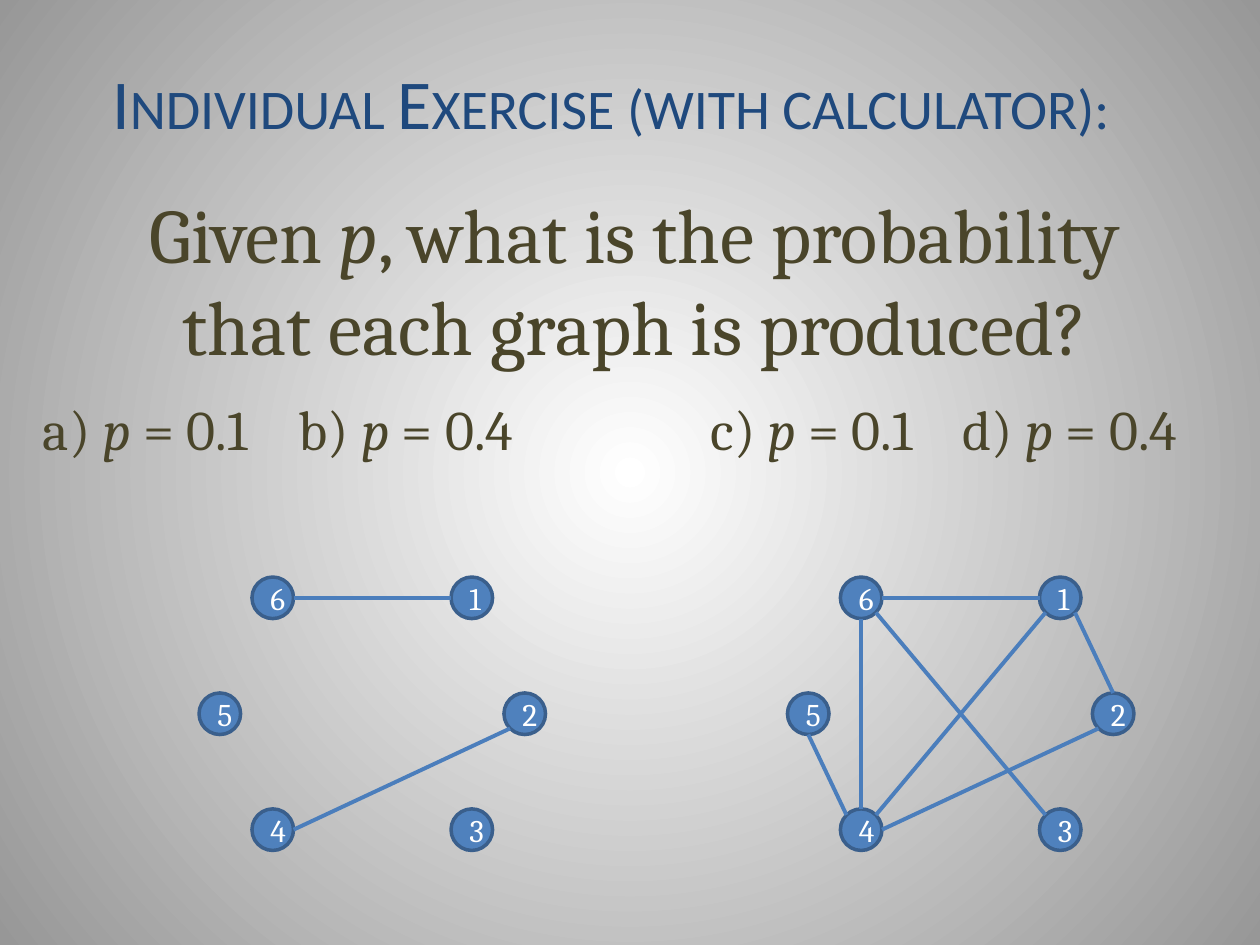
from math import cos, radians, sin

from lxml.etree import SubElement
from pptx import Presentation
from pptx.dml.color import RGBColor
from pptx.enum.shapes import MSO_CONNECTOR, MSO_SHAPE
from pptx.enum.text import MSO_ANCHOR, MSO_AUTO_SIZE, PP_ALIGN
from pptx.oxml.ns import qn
from pptx.util import Inches, Pt

TITLE = "Individual Exercise (with calculator):"
QUESTION = ["Given ", "p", ", what is the probability that each graph is produced?"]
NODES = {"5": (0, 1), "4": (0.42, 2), "6": (0.42, 0),
         "3": (2, 2), "2": (2.42, 1), "1": (2, 0)}
SITES = {"right": 0, "bottom right": 45, "bottom": 90, "bottom left": 135,
         "top left": 225, "top": 270, "top right": 315, "left": 180}
SHARED_EDGES = [("4", "right", "2", "bottom left"), ("6", "right", "1", "left")]
GRAPHS = [
    {"left": 1.58, "box": (0, 3.08, 4.42, 0.64), "inset": 0.34, "tab": 2.03,
     "cases": ["a) ", "p", " = 0.1\tb) ", "p", " = 0.4"],
     "edges": SHARED_EDGES},
    {"left": 6.25, "box": (5.33, 3.08, 4.33, 0.64), "inset": 0.31, "tab": 2,
     "cases": ["c) ", "p", " = 0.1\td) ", "p", " = 0.4"],
     "edges": SHARED_EDGES + [
         ("2", "top", "1", "bottom right"),
         ("4", "top", "6", "bottom"),
         ("4", "top right", "1", "bottom left"),
         ("4", "top left", "5", "bottom"),
         ("3", "top left", "6", "bottom right")]},
]
TOP, ROW_STEP, DIAMETER = 4.58, 0.92, 0.33
OLIVE = "4A452A"


def paint(color_format, value):
    color_format.rgb = RGBColor.from_string(value)


def style(paragraph, size, font, color, align):
    paragraph.font.size = Pt(size)
    paragraph.font.name = font
    paint(paragraph.font.color, color)
    paragraph.alignment = align


def place(shape, left, top, width, height):
    shape.left, shape.top = Inches(left), Inches(top)
    shape.width, shape.height = Inches(width), Inches(height)


def write_formula(frame, pieces, size, align):
    frame.word_wrap = True
    frame.vertical_anchor = MSO_ANCHOR.MIDDLE
    frame.auto_size = MSO_AUTO_SIZE.SHAPE_TO_FIT_TEXT
    paragraph = frame.paragraphs[0]
    style(paragraph, size, "Cambria", OLIVE, align)
    for piece in pieces:
        run = paragraph.add_run()
        run.text = piece
        run.font.italic = piece == "p"
    return paragraph


def set_background(slide):
    fill = slide.background.fill
    fill.gradient()
    for stop, color, position in zip(fill.gradient_stops, ("FFFFFF", "979797"), (0, 1)):
        paint(stop.color, color)
        stop.position = position
    gradient = slide.element.find(".//" + qn("a:gradFill"))
    gradient.remove(gradient.find(qn("a:lin")))
    circle = SubElement(gradient, qn("a:path"), {"path": "circle"})
    SubElement(circle, qn("a:fillToRect"), {side: "50000" for side in "ltrb"})


def add_headings(slide):
    title, question = slide.placeholders
    place(title, 0.79, 0.42, 8.5, 1.49)
    title.text_frame.text = TITLE
    title.text_frame.vertical_anchor = MSO_ANCHOR.TOP
    heading = title.text_frame.paragraphs[0]
    style(heading, 40, "Calibri", "1F497D", PP_ALIGN.LEFT)
    heading.runs[0].font._element.set("cap", "small")

    place(question, 0.79, 1.42, 8.5, 1.58)
    paragraph = write_formula(question.text_frame, QUESTION, 44, PP_ALIGN.CENTER)
    properties = paragraph._p.get_or_add_pPr()
    properties.set("marL", "0")
    properties.set("indent", "0")
    properties.insert_element_before(
        properties.makeelement(qn("a:buNone")), "a:tabLst", "a:defRPr", "a:extLst")


def add_cases(slide, graph):
    box = slide.shapes.add_textbox(*map(Inches, graph["box"]))
    box.text_frame.margin_left = Inches(graph["inset"])
    paragraph = write_formula(box.text_frame, graph["cases"], 32, PP_ALIGN.LEFT)
    paragraph.space_before = Pt(6.4)
    properties = paragraph._p.get_or_add_pPr()
    tabs = properties.makeelement(qn("a:tabLst"))
    SubElement(tabs, qn("a:tab"), {"pos": str(Inches(graph["tab"])), "algn": "l"})
    properties.insert_element_before(tabs, "a:defRPr", "a:extLst")


def add_nodes(slide, left):
    group = slide.shapes.add_group_shape()
    for label, (x, row) in NODES.items():
        node = group.shapes.add_shape(
            MSO_SHAPE.OVAL, Inches(left + x), Inches(TOP + row * ROW_STEP),
            Inches(DIAMETER), Inches(DIAMETER))
        node.shadow.inherit = False
        node.fill.solid()
        paint(node.fill.fore_color, "4F81BD")
        paint(node.line.color, "3A5F8C")
        node.line.width = Pt(2)
        node.text_frame.text = label
        node.text_frame.vertical_anchor = MSO_ANCHOR.MIDDLE
        style(node.text_frame.paragraphs[0], 18, "Cambria", "FFFFFF", PP_ALIGN.CENTER)


def site_point(left, label, site):
    x, row = NODES[label]
    radius, angle = DIAMETER / 2, radians(SITES[site])
    return (Inches(left + x + radius * (1 + cos(angle))),
            Inches(TOP + row * ROW_STEP + radius * (1 + sin(angle))))


def add_edges(slide, graph):
    for start, start_site, end, end_site in graph["edges"]:
        edge = slide.shapes.add_connector(
            MSO_CONNECTOR.STRAIGHT,
            *site_point(graph["left"], start, start_site),
            *site_point(graph["left"], end, end_site))
        paint(edge.line.color, "4B7EBC")
        edge.line.width = Pt(2.25)
        SubElement(edge._element.spPr, qn("a:effectLst"))


def main():
    """Build the random-graph probability exercise slide."""
    deck = Presentation()
    deck.slide_width, deck.slide_height = Inches(10), Inches(7.5)
    slide = deck.slides.add_slide(deck.slide_layouts[1])
    set_background(slide)
    add_headings(slide)
    for graph in GRAPHS:
        add_nodes(slide, graph["left"])
        add_cases(slide, graph)
        add_edges(slide, graph)
    deck.save("out.pptx")


if __name__ == "__main__":
    main()
